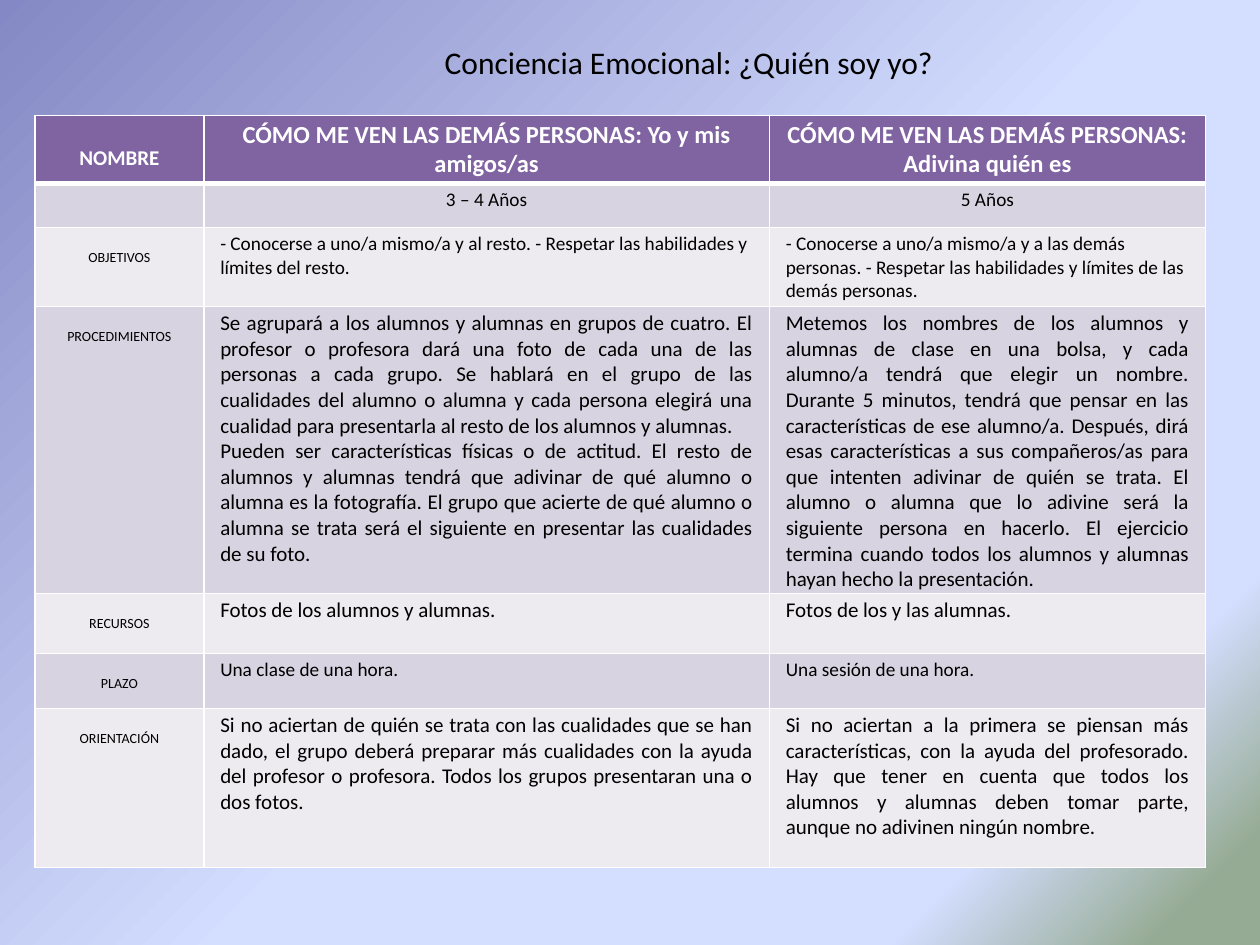
"""Build the emotional awareness activity slide."""
from lxml.etree import SubElement
from pptx import Presentation
from pptx.dml.color import RGBColor
from pptx.enum.text import PP_ALIGN
from pptx.oxml.ns import qn
from pptx.util import Pt

FONT = "Calibri"
BLACK, WHITE = "000000", "FFFFFF"
HEADER_FILL, DARK_BAND, LIGHT_BAND = "8064A2", "D8D3E0", "EDEAF0"
GRADIENT = [(0, "8488C4"), (53, "D4DEFF"), (62, "D4DEFF"), (83, "D4DEFF"), (95, "96AB94")]
TITLE = "Conciencia Emocional: ¿Quién soy yo?"
LEFT, CENTER, JUSTIFY = PP_ALIGN.LEFT, PP_ALIGN.CENTER, PP_ALIGN.JUSTIFY
COLUMN_WIDTHS = [96.5, 323.2, 249.2]
LINE_HEIGHT = 1.22
INSET = 2.5

# Each row: height, label, label size, text size, alignments, two texts
ROWS = [
    (38.9, "NOMBRE", 12, 14, (CENTER, CENTER),
     "CÓMO ME VEN LAS DEMÁS PERSONAS: Yo y mis amigos/as",
     "CÓMO ME VEN LAS DEMÁS PERSONAS: Adivina quién es"),
    (25.1, "", 8, 11, (CENTER, CENTER), "3 – 4 Años", "5 Años"),
    (45.1, "OBJETIVOS", 8, 11, (LEFT, LEFT),
     "- Conocerse a uno/a mismo/a y al resto. - Respetar las habilidades y límites del resto.",
     "- Conocerse a uno/a mismo/a y a las demás personas. - Respetar las habilidades y "
     "límites de las demás personas."),
    (164, "PROCEDIMIENTOS", 8, 12, (JUSTIFY, JUSTIFY),
     "Se agrupará a los alumnos y alumnas en grupos de cuatro. El profesor o profesora dará "
     "una foto de cada una de las personas a cada grupo. Se hablará en el grupo de las "
     "cualidades del alumno o alumna y cada persona elegirá una cualidad para presentarla al "
     "resto de los alumnos y alumnas.\n"
     "Pueden ser características físicas o de actitud. El resto de alumnos y alumnas tendrá "
     "que adivinar de qué alumno o alumna es la fotografía. El grupo que acierte de qué alumno "
     "o alumna se trata será el siguiente en presentar las cualidades de su foto.",
     "Metemos los nombres de los alumnos y alumnas de clase en una bolsa, y cada alumno/a "
     "tendrá que elegir un nombre. Durante 5 minutos, tendrá que pensar en las características "
     "de ese alumno/a. Después, dirá esas características a sus compañeros/as para que intenten "
     "adivinar de quién se trata. El alumno o alumna que lo adivine será la siguiente persona "
     "en hacerlo. El ejercicio termina cuando todos los alumnos y alumnas hayan hecho la "
     "presentación."),
    (34.3, "RECURSOS", 8, 12, (LEFT, LEFT),
     "Fotos de los alumnos y alumnas.", "Fotos de los y las alumnas."),
    (31.4, "PLAZO", 8, 11, (JUSTIFY, LEFT),
     "Una clase de una hora.", "Una sesión de una hora."),
    (90.9, "ORIENTACIÓN", 8, 12, (JUSTIFY, JUSTIFY),
     "Si no aciertan de quién se trata con las cualidades que se han dado, el grupo deberá "
     "preparar más cualidades con la ayuda del profesor o profesora. Todos los grupos "
     "presentaran una o dos fotos.",
     "Si no aciertan a la primera se piensan más características, con la ayuda del profesorado. "
     "Hay que tener en cuenta que todos los alumnos y alumnas deben tomar parte, aunque no "
     "adivinen ningún nombre."),
]


def rgb(value):
    """Turn a hex string into a colour."""
    return RGBColor.from_string(value)


def write(frame, text, size, color=BLACK, bold=False, align=LEFT):
    """Fill a text frame and format its runs."""
    frame.text = text
    for paragraph in frame.paragraphs:
        paragraph.alignment = align
        for run in paragraph.runs:
            run.font.name, run.font.size, run.font.bold = FONT, Pt(size), bold
            run.font.color.rgb = rgb(color)


def add_borders(cell, bottom_width):
    """Give a cell white borders, ahead of its fill."""
    properties = cell.fill._xPr
    widths = {"a:lnL": 1, "a:lnR": 1, "a:lnT": 1, "a:lnB": bottom_width}
    for position, (tag, width) in enumerate(widths.items()):
        line = SubElement(properties, qn(tag), w=str(Pt(width)))
        solid = SubElement(line, qn("a:solidFill"))
        SubElement(solid, qn("a:srgbClr"), val=WHITE)
        properties.insert(position, line)


def paint_background(slide):
    """Paint the diagonal gradient."""
    fill = slide.background.fill
    fill.gradient()
    fill.gradient_angle = 315
    stops = slide.element.find(".//" + qn("a:gsLst"))
    for stop in list(stops):
        stops.remove(stop)
    for percent, color in GRADIENT:
        stop = SubElement(stops, qn("a:gs"), pos=str(percent * 1000))
        SubElement(stop, qn("a:srgbClr"), val=color)


def add_activities(slide):
    """Add the table of activities."""
    heights = [row[0] for row in ROWS]
    table = slide.shapes.add_table(
        len(ROWS), len(COLUMN_WIDTHS), Pt(20), Pt(66),
        Pt(sum(COLUMN_WIDTHS)), Pt(sum(heights))).table
    table.first_row = table.horz_banding = False
    for column, width in zip(table.columns, COLUMN_WIDTHS):
        column.width = Pt(width)
    for index, (height, label, label_size, size, aligns, *texts) in enumerate(ROWS):
        table.rows[index].height = Pt(height)
        header = index == 0
        fill = HEADER_FILL if header else (LIGHT_BAND, DARK_BAND)[index % 2]
        contents = zip([label, *texts], [label_size, size, size], [CENTER, *aligns])
        for column, (text, text_size, align) in enumerate(contents):
            cell = table.cell(index, column)
            cell.fill.solid()
            cell.fill.fore_color.rgb = rgb(fill)
            add_borders(cell, 3 if header else 1)
            cell.margin_left = cell.margin_right = Pt(9.36)
            inset = INSET if text else 0
            drop = LINE_HEIGHT * text_size if text and column == 0 else 0
            cell.margin_top, cell.margin_bottom = Pt(inset + drop), Pt(inset)
            write(cell.text_frame, text, text_size, WHITE if header else BLACK, header, align)


def main():
    """Assemble and save the slide."""
    presentation = Presentation()
    presentation.slide_width, presentation.slide_height = Pt(720), Pt(540)
    slide = presentation.slides.add_slide(presentation.slide_layouts[6])
    paint_background(slide)
    title = slide.shapes.add_textbox(Pt(247), Pt(21), Pt(294.5), Pt(29))
    write(title.text_frame, TITLE, 18)
    add_activities(slide)
    presentation.save("out.pptx")


if __name__ == "__main__":
    main()
